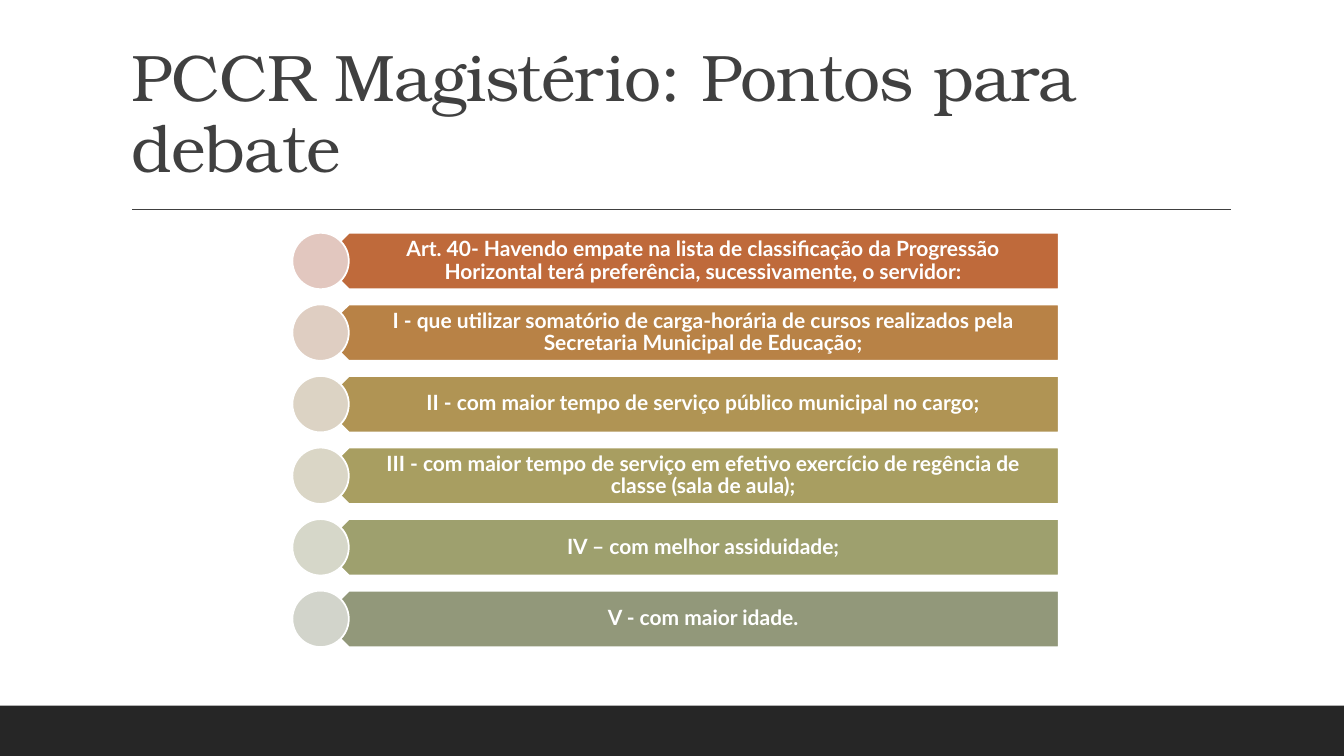
from lxml import etree
from pptx import Presentation
from pptx import util as u
from pptx.dml.color import RGBColor
from pptx.enum import shapes, text
from pptx.oxml.ns import qn

SLIDE_WIDTH, SLIDE_HEIGHT = 13.33, 7.5
ROW_HEIGHT, ROW_STEP = 0.56, 0.71
CRITERIA = [
    ("Art. 40- Havendo empate na lista de classificação da Progressão Horizontal "
     "terá preferência, sucessivamente, o servidor:", "BF6A3B", "E2C7BF"),
    ("I - que utilizar somatório de carga-horária de cursos realizados pela "
     "Secretaria Municipal de Educação;", "B88246", "DFCEC2"),
    ("II - com maior tempo de serviço público municipal no cargo;", "B09454", "DCD3C4"),
    ("III - com maior tempo de serviço em efetivo exercício de regência de classe "
     "(sala de aula);", "A89E61", "DAD6C6"),
    ("IV – com melhor assiduidade;", "9EA06E", "D6D7C9"),
    ("V - com maior idade.", "92987A", "D2D4CB"),
]


def color(value):
    return RGBColor.from_string(value)


def inches(*lengths):
    return [u.Inches(length) for length in lengths]


def add_filled(page, kind, box, fill, outline=None):
    shape = page.shapes.add_shape(kind, *inches(*box))
    shape.shadow.inherit = False
    shape.fill.solid()
    shape.fill.fore_color.rgb = color(fill)
    if outline:
        shape.line.color.rgb = color(outline)
        shape.line.width = u.Pt(1.25)
    else:
        shape.line.fill.background()
    return shape


def style_paragraph(para, font_name, size, fill, align, bold=False):
    para.alignment = align
    para.line_spacing = 0.9
    para.font.name = font_name
    para.font.size = u.Pt(size)
    para.font.bold = bold
    para.font.color.rgb = color(fill)


def add_footer_band(page, box):
    add_filled(page, shapes.MSO_SHAPE.RECTANGLE, box, "262626")


def add_title(page, box):
    left, top, width, height = box
    title = page.shapes.title
    title.left, title.top, title.width, title.height = inches(*box)
    frame = title.text_frame
    frame.text = "PCCR Magistério: Pontos para debate"
    frame.word_wrap = True
    frame.auto_size = text.MSO_AUTO_SIZE.NONE
    frame.vertical_anchor = text.MSO_ANCHOR.BOTTOM
    para = frame.paragraphs[0]
    style_paragraph(para, "TeX Gyre Bonum", 47, "404040", text.PP_ALIGN.LEFT)
    para.runs[0]._r.get_or_add_rPr().set("spc", "-50")

    rule_left, rule_top = left + 0.11, top + height + 0.18
    rule = page.shapes.add_connector(
        shapes.MSO_CONNECTOR.STRAIGHT,
        *inches(rule_left, rule_top, left + width + 0.01, rule_top))
    rule.line.color.rgb = color("404040")
    rule.line.width = u.Pt(1)
    etree.SubElement(rule._element.spPr, qn("a:effectLst"))


def add_criterion(page, box, wording, bar_fill, circle_fill):
    left, top, width, height = box
    radius = height / 2
    bar = add_filled(page, shapes.MSO_SHAPE.PENTAGON,
                     (left + radius, top, width - radius, height), bar_fill, "FFFFFF")
    bar.rotation = 180

    label = page.shapes.add_textbox(
        *inches(left + radius * 1.5, top, width - radius * 1.5, height))
    frame = label.text_frame
    frame.word_wrap = True
    frame.vertical_anchor = text.MSO_ANCHOR.MIDDLE
    frame.margin_left, frame.margin_right = inches(0.25, 0.12)
    frame.margin_top = frame.margin_bottom = u.Inches(0.06)
    frame.text = wording
    style_paragraph(frame.paragraphs[0], "Lato", 15, "FFFFFF", text.PP_ALIGN.CENTER, True)

    add_filled(page, shapes.MSO_SHAPE.OVAL, (left, top, height, height),
               circle_fill, "FFFFFF")


def add_criteria(page, box):
    left, top, width = box
    for row, criterion in enumerate(CRITERIA):
        add_criterion(page, (left, top + row * ROW_STEP, width, ROW_HEIGHT), *criterion)


def main():
    deck = Presentation()
    deck.slide_width, deck.slide_height = inches(SLIDE_WIDTH, SLIDE_HEIGHT)
    page = deck.slides.add_slide(deck.slide_layouts.get_by_name("Title Only"))
    add_footer_band(page, (0, 7, SLIDE_WIDTH, 0.5))
    add_title(page, (1.2, 0.31, 11, 1.59))
    add_criteria(page, (2.9, 2.31, 7.6))
    deck.save("out.pptx")


if __name__ == "__main__":
    main()
